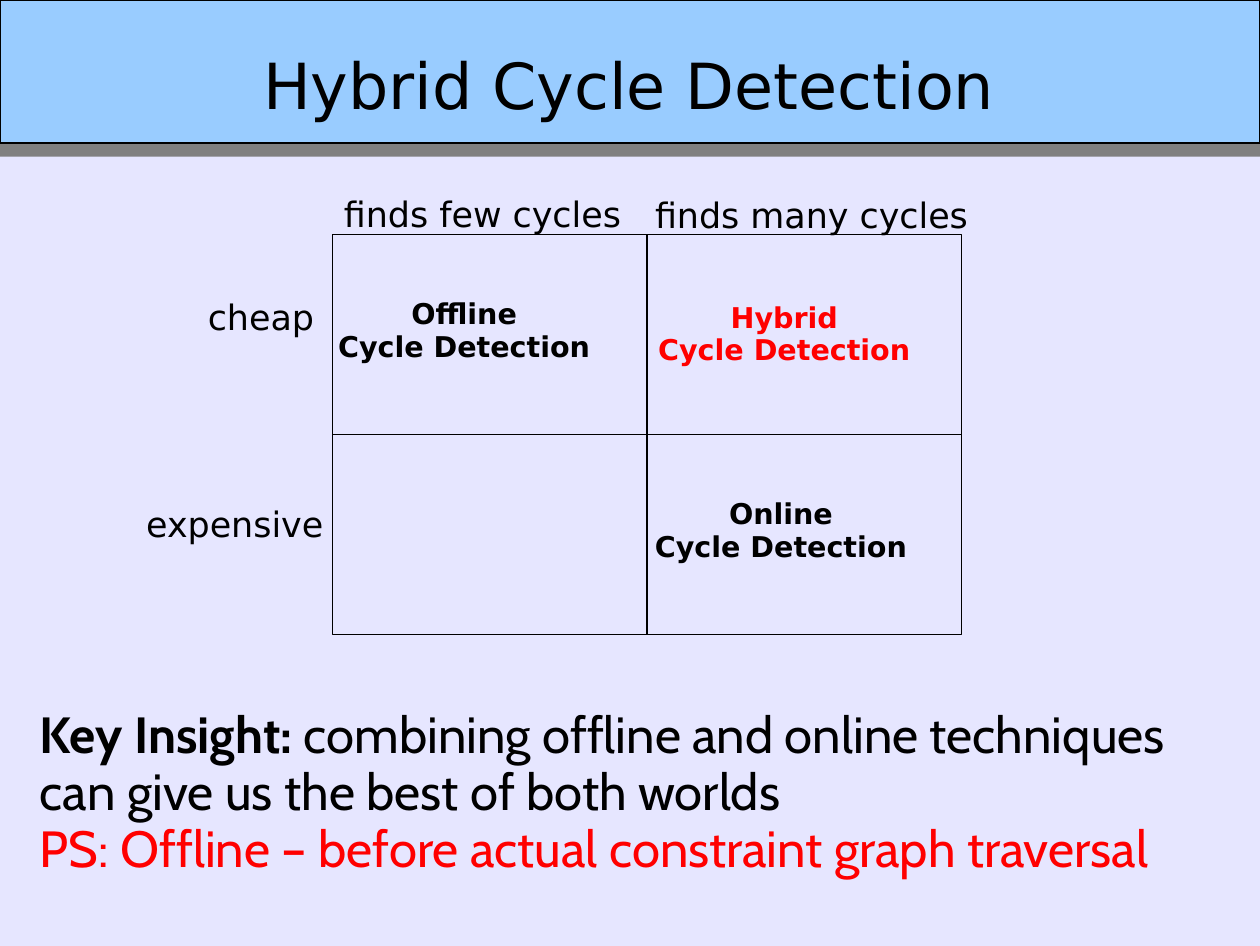
from pptx import Presentation
from pptx.dml.color import RGBColor
from pptx.enum.shapes import MSO_SHAPE
from pptx.enum.text import MSO_ANCHOR, PP_ALIGN
from pptx.util import Pt

WIDE, HIGH = 793.44, 595.44
INK, RED = "000000", "FF0000"
SANS, CABIN = "DejaVu Sans", "Cabin"
LEFT, MID = PP_ALIGN.LEFT, PP_ALIGN.CENTER

TITLE = "Hybrid Cycle Detection"
LABELS = [
    ("finds few cycles", 209.5, 118.8, 190),
    ("finds many cycles", 405.4, 119.2, 212),
    ("cheap", 123.8, 183.6, 84),
    ("expensive", 85, 313.9, 127),
]
METHODS = [
    ("Offline", INK, 292.3, 183.6),
    ("Online", INK, 491.8, 309.6),
    ("Hybrid", RED, 493.9, 185.8),
]
INSIGHT = [
    [("Key Insight:", INK, True),
     (" combining offline and online techniques can give us the best of both worlds", INK, False)],
    [("PS: Offline – before actual constraint graph traversal", RED, False)],
]
GRID_X, GRID_Y, CELL_W, CELL_H = 209.5, 147.6, 198, 126
NAME_W, NAME_H = 176, 47.5


def color(code):
    return RGBColor.from_string(code)


def rect(x, y, w, h, fill=None, line=None):
    box = slide.shapes.add_shape(MSO_SHAPE.RECTANGLE, Pt(x), Pt(y), Pt(w), Pt(h))
    box.shadow.inherit = False
    if fill:
        box.fill.solid()
        box.fill.fore_color.rgb = color(fill)
    else:
        box.fill.background()
    if line:
        box.line.color.rgb = color(line)
        box.line.width = Pt(0.75)
    else:
        box.line.fill.background()


def text(x, y, w, h, lines, size, font=SANS, align=LEFT, wrap=False,
         space=0.95, pad=(7.2, 4.3, 7.2, 3.6), anchor=MSO_ANCHOR.TOP):
    frame = slide.shapes.add_textbox(Pt(x), Pt(y), Pt(w), Pt(h)).text_frame
    frame.word_wrap = wrap
    frame.vertical_anchor = anchor
    frame.margin_left, frame.margin_top, frame.margin_right, frame.margin_bottom = map(Pt, pad)
    for i, runs in enumerate(lines):
        para = frame.add_paragraph() if i else frame.paragraphs[0]
        para.alignment = align
        para.line_spacing = space
        for words, tint, bold in runs:
            run = para.add_run()
            run.text = words
            run.font.name = font
            run.font.size = Pt(size)
            run.font.bold = bold
            run.font.color.rgb = color(tint)


deck = Presentation()
deck.slide_width, deck.slide_height = Pt(WIDE), Pt(HIGH)
slide = deck.slides.add_slide(deck.slide_layouts[6])
slide.background.fill.solid()
slide.background.fill.fore_color.rgb = color("E6E6FF")

rect(0, 8.6, WIDE, 90, fill="808080")
rect(0, 0, WIDE, 90, fill="99CCFF", line=INK)
text(0, 0, 792, 108, [[(TITLE, INK, False)]], 40, align=MID, wrap=True,
     pad=(0, 2.2, 0, 0), anchor=MSO_ANCHOR.MIDDLE)

for row in range(2):
    for col in range(2):
        rect(GRID_X + col * CELL_W, GRID_Y + row * CELL_H, CELL_W, CELL_H, line=INK)

for words, x, y, w in LABELS:
    text(x, y, w, 31.7, [[(words, INK, False)]], 22)

for name, tint, center, y in METHODS:
    lines = [[(name, tint, True)], [("Cycle Detection", tint, True)]]
    text(center - NAME_W / 2, y, NAME_W, NAME_H, lines, 18, align=MID)

text(18, 440, 774, 139.7, INSIGHT, 32, CABIN, wrap=True, space=0.93,
     pad=(7.2, 5.8, 7.2, 3.6))

deck.save("out.pptx")
